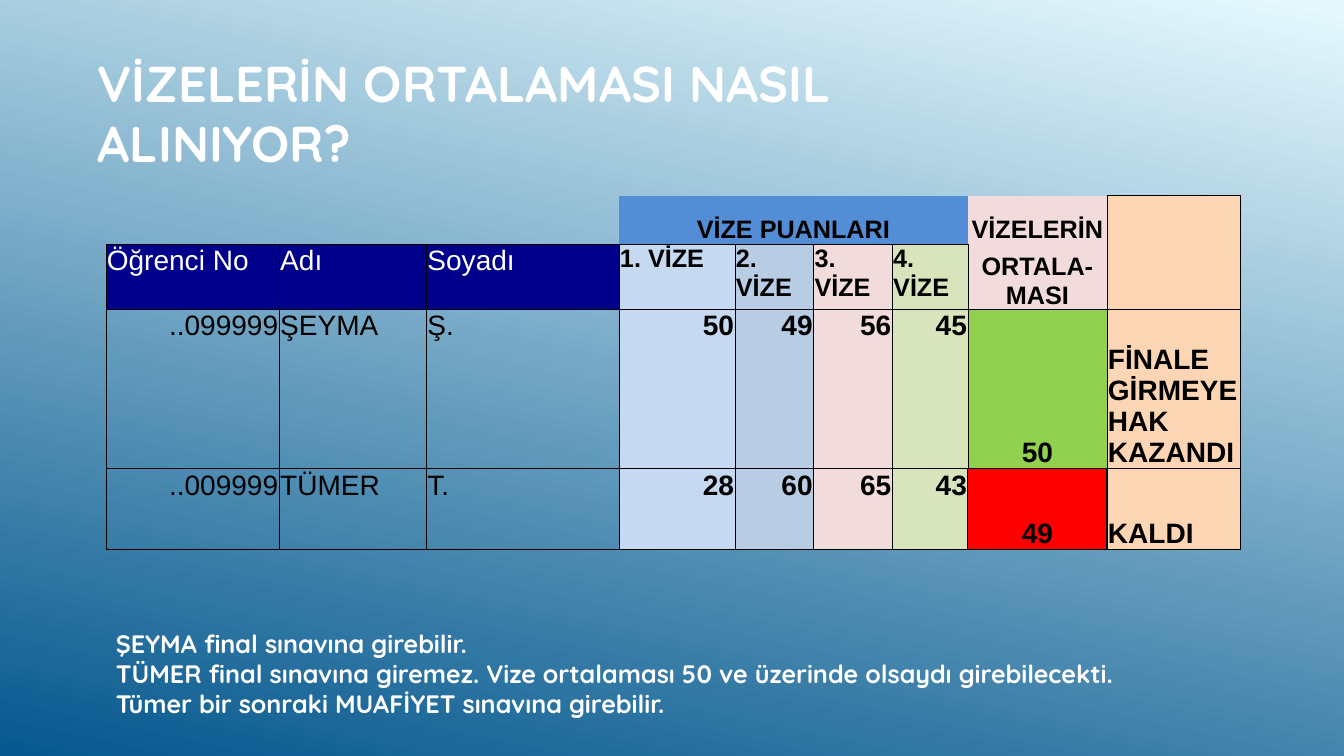
from lxml import etree
from pptx import Presentation
from pptx.dml.color import RGBColor
from pptx.enum.text import MSO_ANCHOR, PP_ALIGN
from pptx.oxml.ns import qn
from pptx.util import Inches, Pt

LEFT, CENTER, RIGHT = PP_ALIGN.LEFT, PP_ALIGN.CENTER, PP_ALIGN.RIGHT
TOP, MIDDLE, BOTTOM = MSO_ANCHOR.TOP, MSO_ANCHOR.MIDDLE, MSO_ANCHOR.BOTTOM
PLAIN_TABLE = "{2D5ABB26-0587-4C30-8999-92F81FD0307C}"
BLACK, WHITE, NAVY = "000000", "FFFFFF", "00008B"
ROSE, PEACH = "F2DCDB", "FCD5B4"
EXAM_FILLS = ["C5D9F1", "B8CCE4", ROSE, "D8E4BC"]


def rgb(value):
    return RGBColor.from_string(value)


def write(p, text, align=LEFT, **font):
    p.alignment = align
    r = p.add_run()
    r.text = text
    r.font.color.rgb = rgb(font.pop("color"))
    for name, value in font.items():
        setattr(r.font, name, value)


prs = Presentation()
prs.slide_width, prs.slide_height = Inches(13.33), Inches(7.5)
s = prs.slides.add_slide(prs.slide_layouts[6])

# Background gradient
fill = s.background.fill
fill.gradient()
fill.gradient_angle = 258
for stop, position, color in zip(fill.gradient_stops, (0.01, 1), ("E4F8FD", "06588E")):
    stop.position = position
    stop.color.rgb = rgb(color)

# Title and conclusion
texts = [
    ((0.87, 0.29, 9.33, 1.65), MIDDLE, 36, ["VİZELERİN ORTALAMASI NASIL ALINIYOR?"]),
    ((1.05, 6.18, 10.83, 1.31), TOP, 18, [
        "ŞEYMA final sınavına girebilir.",
        "TÜMER final sınavına giremez. Vize ortalaması 50 ve üzerinde olsaydı "
        "girebilecekti. Tümer bir sonraki MUAFİYET sınavına girebilir."]),
]
for box, anchor, size, lines in texts:
    tf = s.shapes.add_textbox(*map(Inches, box)).text_frame
    tf.word_wrap = True
    tf.vertical_anchor = anchor
    for i, line in enumerate(lines):
        p = tf.add_paragraph() if i else tf.paragraphs[0]
        write(p, line, size=Pt(size), name="Quicksand", bold=True, color=WHITE)

# Grade table
rows = [
    ["", "", "", "VİZE PUANLARI", "", "", "", "VİZELERİN", ""],
    ["Öğrenci No", "Adı", "Soyadı", "1. VİZE", "2. VİZE", "3. VİZE", "4. VİZE",
     "ORTALA-MASI", ""],
    ["..099999", "ŞEYMA", "Ş.", "50", "49", "56", "45", "50",
     "FİNALE GİRMEYE HAK KAZANDI"],
    ["..009999", "TÜMER", "T.", "28", "60", "65", "43", "49", "KALDI"],
]
fills = [
    [None] * 3 + ["538DD5"] * 4 + [ROSE, PEACH],
    [NAVY] * 3 + EXAM_FILLS + [ROSE, PEACH],
    [None] * 3 + EXAM_FILLS + ["92D050", PEACH],
    [None] * 3 + EXAM_FILLS + ["FF0000", PEACH],
]
# Sides with a line; cells not listed have all four
sides = {(0, c): "B" for c in range(7)}
sides.update({(0, 7): "R", (0, 8): "LRT", (1, 7): "LRB", (1, 8): "LRB"})
# Sides with a 1 pt line around the failing average
thick = {(2, 7): "B", (3, 6): "R", (3, 7): "LRTB", (3, 8): "L"}

frame = s.shapes.add_table(4, 9, *map(Inches, (1.05, 1.94, 11.25, 3.51)))
table = frame.table
table.first_row = table.horz_banding = False
table._tbl.tblPr.find(qn("a:tableStyleId")).text = PLAIN_TABLE
for col, width in zip(table.columns, (1.72, 1.46, 1.91, 1.15, 0.78, 0.78, 0.75, 1.38, 1.32)):
    col.width = Inches(width)
for row, height in zip(table.rows, (0.48, 0.65, 1.58, 0.8)):
    row.height = Inches(height)
table.cell(0, 3).merge(table.cell(0, 6))

for r, row in enumerate(rows):
    for c, text in enumerate(row):
        cell = table.cell(r, c)
        cell.margin_left = cell.margin_right = cell.margin_top = Inches(0.01)
        cell.margin_bottom = 0
        cell.vertical_anchor = BOTTOM if r == 0 or c > 6 else TOP

        # Borders come before the fill in the cell properties
        tc_pr = cell._tc.get_or_add_tcPr()
        for side in "LRTB":
            width = Pt(1 if side in thick.get((r, c), "") else 0.5)
            ln = etree.SubElement(tc_pr, qn("a:ln" + side), w=str(width))
            if side in sides.get((r, c), "LRTB"):
                solid = etree.SubElement(ln, qn("a:solidFill"))
                etree.SubElement(solid, qn("a:srgbClr"), val=BLACK)
            else:
                etree.SubElement(ln, qn("a:noFill"))
        if fills[r][c]:
            cell.fill.solid()
            cell.fill.fore_color.rgb = rgb(fills[r][c])
        else:
            cell.fill.background()

        if text:
            if r == 0 or c == 7:
                align = CENTER
            else:
                align = RIGHT if r > 1 and c in (0, 3, 4, 5, 6) else LEFT
            write(cell.text_frame.paragraphs[0], text, align, name="Arial",
                  size=Pt(18 if r < 2 and c > 2 else 20), bold=c > 2,
                  color=WHITE if fills[r][c] == NAVY else BLACK)

prs.save("out.pptx")
